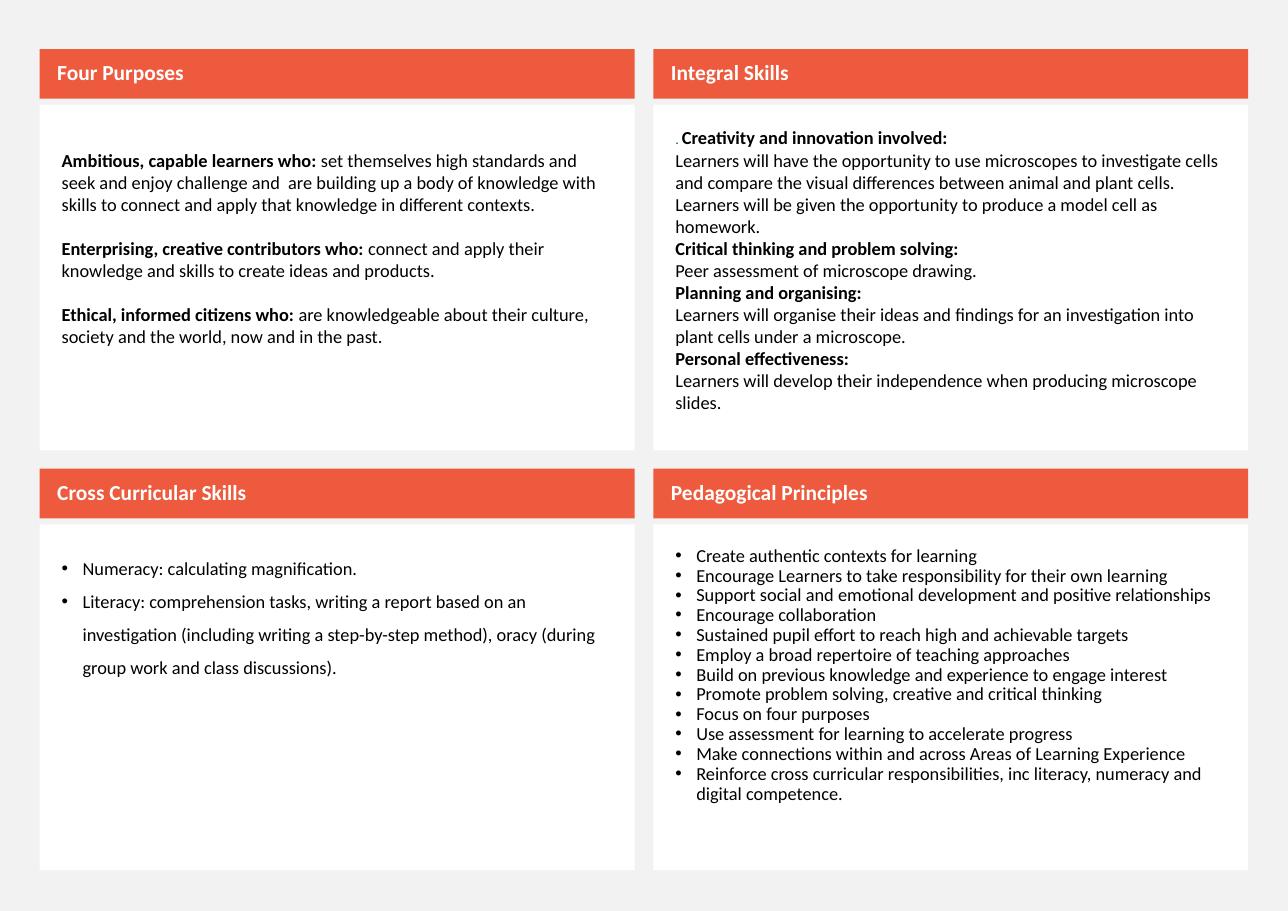
from pptx import Presentation
from pptx.dml.color import RGBColor
from pptx.enum.shapes import MSO_SHAPE
from pptx.enum.text import MSO_ANCHOR, PP_ALIGN
from pptx.oxml.ns import qn
from pptx.util import Pt
from lxml import etree

RECTANGLE = MSO_SHAPE.RECTANGLE
TOP, MIDDLE = MSO_ANCHOR.TOP, MSO_ANCHOR.MIDDLE
LEFT = PP_ALIGN.LEFT

PX = 4572  # 200 px to the inch
SLIDE_WIDTH, SLIDE_HEIGHT = 2338, 1654
GRID_LEFT, GRID_TOP = 72, 89
COLUMN_PITCH, ROW_PITCH = 1114, 762
PANEL_WIDTH, PANEL_HEIGHT = 1080, 729
HEADER_HEIGHT, HEADER_GAP = 90, 11
PADDING, BULLET_INDENT = 40, 38
BODY_LINE = 40

FONT = "Calibri"
GREY = RGBColor(0xF2, 0xF2, 0xF2)
ORANGE = RGBColor(0xED, 0x5A, 0x3E)
WHITE = RGBColor(0xFF, 0xFF, 0xFF)
BLACK = RGBColor(0, 0, 0)
GREEN = RGBColor(0x00, 0x67, 0x58)

PURPOSES = [
    ("Ambitious, capable learners who: ",
     "set themselves high standards and seek and enjoy challenge and  are building up "
     "a body of knowledge with skills to connect and apply that knowledge in different contexts."),
    ("Enterprising, creative contributors who: ",
     "connect and apply their knowledge and skills to create ideas and products."),
    ("Ethical, informed citizens who: ",
     "are knowledgeable about their culture, society and the world, now and in the past."),
]
INTEGRAL_SKILLS = [
    ("Creativity and innovation involved:", [
        "Learners will have the opportunity to use microscopes to investigate cells and "
        "compare the visual differences between animal and plant cells.",
        "Learners will be given the opportunity to produce a model cell as homework."]),
    ("Critical thinking and problem solving:", ["Peer assessment of microscope drawing."]),
    ("Planning and organising:", [
        "Learners will organise their ideas and findings for an investigation into "
        "plant cells under a microscope."]),
    ("Personal effectiveness:", [
        "Learners will develop their independence when producing microscope slides."]),
]
CROSS_CURRICULAR_SKILLS = [
    "Numeracy: calculating magnification.",
    "Literacy: comprehension tasks, writing a report based on an investigation (including "
    "writing a step-by-step method), oracy (during group work and class discussions).",
]
PRINCIPLES = [
    "Create authentic contexts for learning",
    "Encourage Learners to take responsibility for their own learning",
    "Support social and emotional development and positive relationships",
    "Encourage collaboration",
    "Sustained pupil effort to reach high and achievable targets",
    "Employ a broad repertoire of teaching approaches",
    "Build on previous knowledge and experience to engage interest",
    "Promote problem solving, creative and critical thinking",
    "Focus on four purposes",
    "Use assessment for learning to accelerate progress",
    "Make connections within and across Areas of Learning Experience",
    "Reinforce cross curricular responsibilities, inc literacy, numeracy and digital competence.",
]


def add_box(slide, box, fill, insets, anchor):
    shape = slide.shapes.add_shape(RECTANGLE, *(length * PX for length in box))
    shape.shadow.inherit = False
    shape.fill.solid()
    shape.fill.fore_color.rgb = fill
    shape.line.fill.background()
    frame = shape.text_frame
    frame.word_wrap = True
    frame.vertical_anchor = anchor
    (frame.margin_left, frame.margin_top,
     frame.margin_right, frame.margin_bottom) = (inset * PX for inset in insets)
    return frame


def next_paragraph(frame):
    """Return the first paragraph while it is empty, otherwise a new one."""
    first = frame.paragraphs[0]
    paragraph = frame.add_paragraph() if first.runs else first
    paragraph.alignment = LEFT
    return paragraph


def add_run(paragraph, text, size=12, color=BLACK, bold=False):
    run = paragraph.add_run()
    run.text = text
    run.font.name = FONT
    run.font.size = Pt(size)
    run.font.color.rgb = color
    run.font.bold = bold


def add_panel(slide, box, title, top_inset=PADDING):
    """Draw a titled panel and return the text frame of its body."""
    left, top, width, height = box
    header = add_box(slide, (left, top, width, HEADER_HEIGHT), ORANGE, (32, 10, 20, 10), MIDDLE)
    paragraph = next_paragraph(header)
    paragraph.line_spacing = 0.9
    add_run(paragraph, title, 14, WHITE, True)
    offset = HEADER_HEIGHT + HEADER_GAP
    return add_box(slide, (left, top + offset, width, height - offset), WHITE,
                   (PADDING, top_inset, PADDING, PADDING), TOP)


def add_bullets(frame, items, line_spacing):
    for item in items:
        paragraph = next_paragraph(frame)
        paragraph.line_spacing = line_spacing
        add_run(paragraph, item)
        properties = paragraph._p.get_or_add_pPr()
        properties.set("marL", str(BULLET_INDENT * PX))
        properties.set("indent", str(-BULLET_INDENT * PX))
        etree.SubElement(properties, qn("a:buFont")).set("typeface", "Arial")
        etree.SubElement(properties, qn("a:buChar")).set("char", "•")


def add_four_purposes(slide, box):
    frame = add_panel(slide, box, "Four Purposes", PADDING + BODY_LINE)
    for index, (learners, purpose) in enumerate(PURPOSES):
        paragraph = next_paragraph(frame)
        if index:
            paragraph.space_before = Pt(14.5)
        add_run(paragraph, learners, bold=True)
        add_run(paragraph, purpose)


def add_integral_skills(slide, box):
    frame = add_panel(slide, box, "Integral Skills")
    for index, (skill, activities) in enumerate(INTEGRAL_SKILLS):
        paragraph = next_paragraph(frame)
        if index == 0:
            add_run(paragraph, ". ", 9, GREEN)
        add_run(paragraph, skill, bold=True)
        for activity in activities:
            add_run(next_paragraph(frame), activity)


def add_cross_curricular_skills(slide, box):
    add_bullets(add_panel(slide, box, "Cross Curricular Skills"), CROSS_CURRICULAR_SKILLS, 1.5)


def add_pedagogical_principles(slide, box):
    add_bullets(add_panel(slide, box, "Pedagogical Principles"), PRINCIPLES, 0.9)


def main():
    presentation = Presentation()
    presentation.slide_width = SLIDE_WIDTH * PX
    presentation.slide_height = SLIDE_HEIGHT * PX
    slide = presentation.slides.add_slide(presentation.slide_layouts[6])
    slide.background.fill.solid()
    slide.background.fill.fore_color.rgb = GREY
    panels = [add_four_purposes, add_integral_skills,
              add_cross_curricular_skills, add_pedagogical_principles]
    for index, draw_panel in enumerate(panels):
        row, column = divmod(index, 2)
        draw_panel(slide, (GRID_LEFT + column * COLUMN_PITCH, GRID_TOP + row * ROW_PITCH,
                           PANEL_WIDTH, PANEL_HEIGHT))
    presentation.save("out.pptx")


if __name__ == "__main__":
    main()
